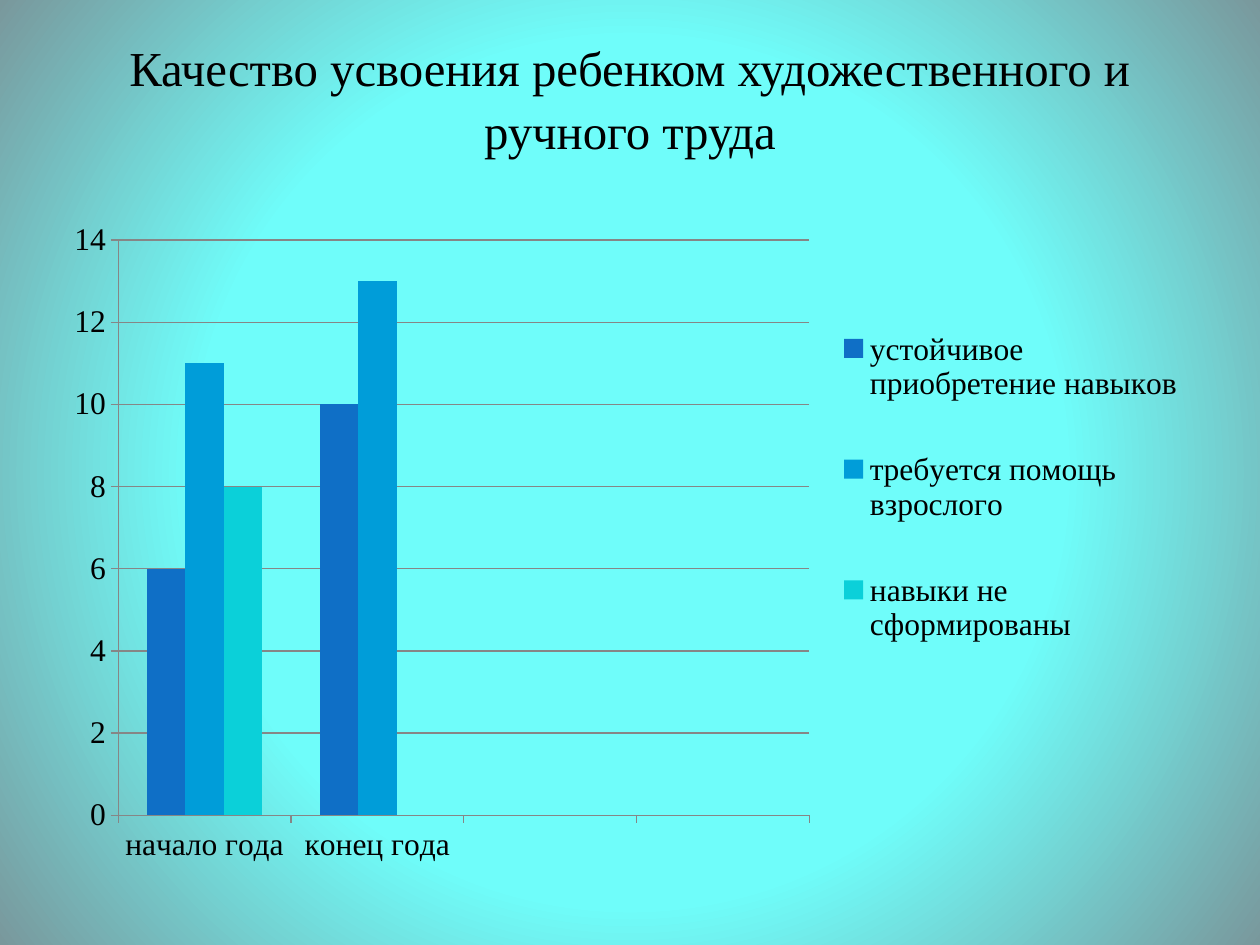
from lxml import etree
from pptx import Presentation
from pptx import util as u
from pptx.chart import data as chart_data
from pptx.dml.color import RGBColor
from pptx.enum import chart as chart_enum, text
from pptx.oxml import parse_xml
from pptx.oxml.ns import nsdecls, qn

BLACK = RGBColor(0x00, 0x00, 0x00)
GRID_GRAY = RGBColor(0x86, 0x86, 0x86)
CENTER_CYAN = RGBColor(0x6F, 0xFD, 0xFA)
EDGE_GRAY = RGBColor(0x79, 0x98, 0x9C)
FONT = "Times New Roman"
TITLE = "Качество усвоения ребенком художественного и ручного труда"
CATEGORIES = ["начало года", "конец года", "", ""]
SERIES = [
    ("устойчивое приобретение навыков", (6, 10, None, None), RGBColor(0x0F, 0x6F, 0xC6)),
    ("требуется помощь взрослого", (11, 13, None, None), RGBColor(0x00, 0x9D, 0xD9)),
    ("навыки не сформированы", (8, None, None, None), RGBColor(0x0B, 0xD0, 0xD9)),
]


def paint_background(slide):
    """Fill the slide with a circular gradient around its centre."""
    fill = slide.background.fill
    fill.gradient()
    inner, outer = fill.gradient_stops
    inner.position, inner.color.rgb = 0.55, CENTER_CYAN
    outer.position, outer.color.rgb = 1.0, EDGE_GRAY
    gradient = slide.background._cSld.find(".//" + qn("a:gradFill"))
    circle = parse_xml(
        f'<a:path {nsdecls("a")} path="circle">'
        '<a:fillToRect l="50000" t="50000" r="50000" b="50000"/></a:path>'
    )
    gradient.replace(gradient.find(qn("a:lin")), circle)


def place_title(slide, left, top, width, height):
    """Put the heading into the title placeholder."""
    title = slide.shapes.title
    title.left, title.top, title.width, title.height = left, top, width, height
    frame = title.text_frame
    frame.auto_size = text.MSO_AUTO_SIZE.NONE
    frame.word_wrap = True
    frame.vertical_anchor = text.MSO_ANCHOR.MIDDLE
    frame.margin_top = u.Inches(0.19)
    paragraph = frame.paragraphs[0]
    paragraph.alignment = text.PP_ALIGN.CENTER
    paragraph.line_spacing = 1.07
    run = paragraph.add_run()
    run.text = TITLE
    run.font.name = FONT
    run.font.size = u.Pt(27.9)
    run.font.color.rgb = BLACK


def set_layout(element, after, x, y, w, h, inner=False):
    """Fix a chart part at fractions of the chart area."""
    for old in element.findall(qn("c:layout")):
        element.remove(old)
    layout = etree.Element(qn("c:layout"))
    manual = etree.SubElement(layout, qn("c:manualLayout"))
    settings = [("layoutTarget", "inner")] if inner else []
    settings += [("xMode", "edge"), ("yMode", "edge"), ("x", x), ("y", y), ("w", w), ("h", h)]
    for name, value in settings:
        etree.SubElement(manual, qn(f"c:{name}")).set("val", str(value))
    position = 0 if after is None else element.index(element.find(qn(after))) + 1
    element.insert(position, layout)


def format_axis(axis):
    """Give an axis its line, outward ticks and label font."""
    axis.major_tick_mark = chart_enum.XL_TICK_MARK.OUTSIDE
    axis.minor_tick_mark = chart_enum.XL_TICK_MARK.NONE
    axis.format.line.color.rgb = GRID_GRAY
    axis.format.line.width = u.Pt(0.75)
    format_font(axis.tick_labels.font)


def format_font(font):
    """Apply the chart's common text style."""
    font.name = FONT
    font.size = u.Pt(18)
    font.color.rgb = BLACK


def place_chart(slide, left, top, width, height):
    """Add the clustered column chart with its legend."""
    data = chart_data.CategoryChartData()
    data.categories = CATEGORIES
    for name, values, _ in SERIES:
        data.add_series(name, values)
    chart = slide.shapes.add_chart(
        chart_enum.XL_CHART_TYPE.COLUMN_CLUSTERED, left, top, width, height, data
    ).chart
    chart.has_title = False
    format_font(chart.font)
    plot = chart.plots[0]
    plot.gap_width, plot.overlap, plot.vary_by_categories = 150, 0, False
    for series, (_, _, color) in zip(plot.series, SERIES):
        series.format.fill.solid()
        series.format.fill.fore_color.rgb = color
    format_axis(chart.category_axis)
    value_axis = chart.value_axis
    format_axis(value_axis)
    value_axis.minimum_scale, value_axis.maximum_scale, value_axis.major_unit = 0, 14, 2
    value_axis.has_major_gridlines = True
    value_axis.major_gridlines.format.line.color.rgb = GRID_GRAY
    value_axis.major_gridlines.format.line.width = u.Pt(0.75)
    chart.has_legend = True
    legend = chart.legend
    legend.position = chart_enum.XL_LEGEND_POSITION.RIGHT
    legend.include_in_layout = False
    format_font(legend.font)
    plot_area = chart._chartSpace.find(".//" + qn("c:plotArea"))
    set_layout(plot_area, None, 0.06, 0.05, 0.6, 0.86, inner=True)
    set_layout(legend._element, "c:legendPos", 0.68, 0.11, 0.31, 0.62)


def main():
    """Build and save the presentation."""
    presentation = Presentation()
    presentation.slide_width, presentation.slide_height = u.Inches(10), u.Inches(7.5)
    slide = presentation.slides.add_slide(presentation.slide_layouts[5])
    paint_background(slide)
    place_title(slide, u.Inches(0.5), u.Inches(0.3), u.Inches(9), u.Inches(0.79))
    place_chart(slide, u.Inches(0.39), u.Inches(1.64), u.Inches(9.14), u.Inches(5.31))
    presentation.save("out.pptx")


if __name__ == "__main__":
    main()
